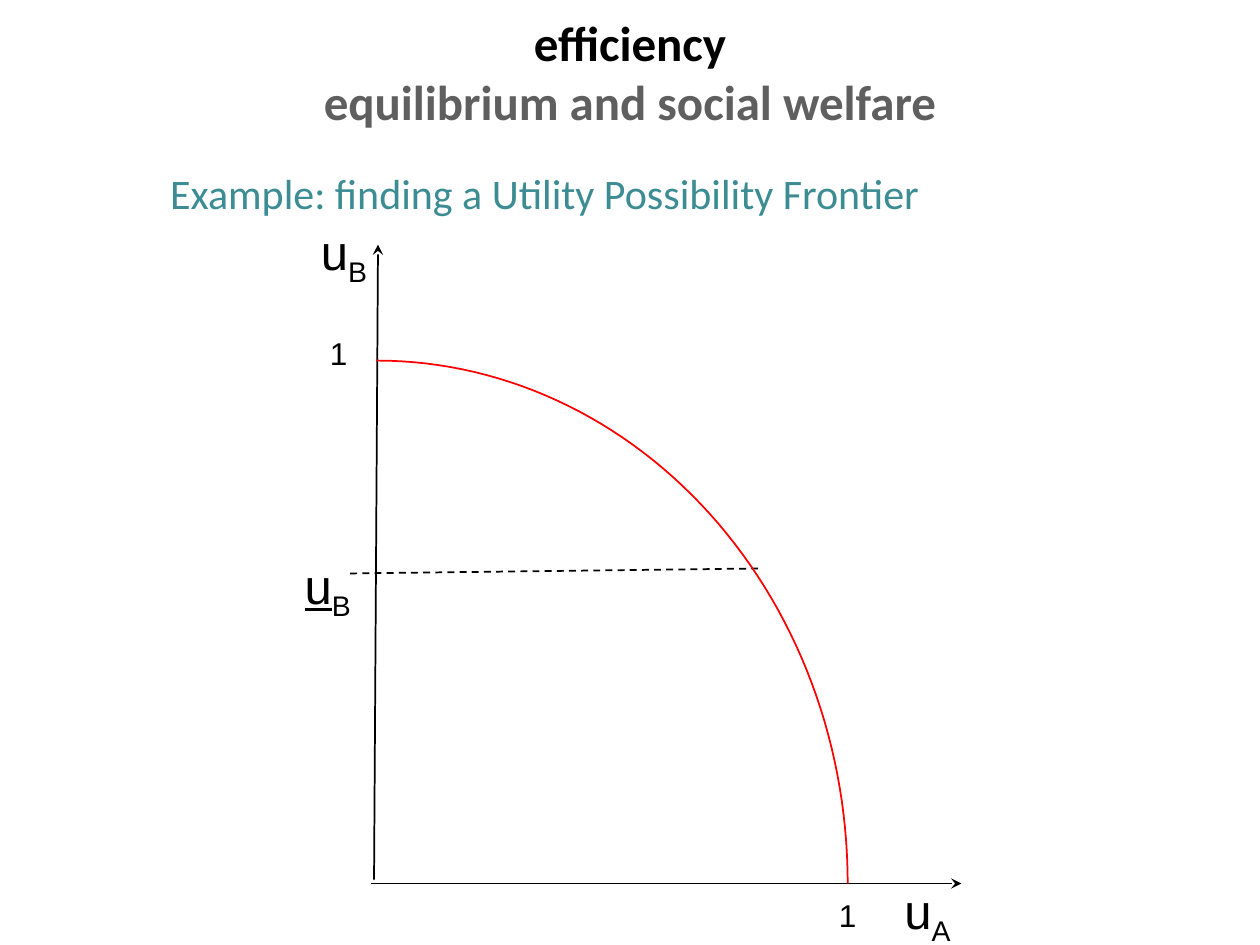
import math
from lxml import etree
from pptx import Presentation
from pptx import util as u
from pptx.dml.color import RGBColor
from pptx.enum import dml, shapes, text
from pptx.oxml import ns

# Content: lengths in cm, text sizes in points
BLACK, GREY, TEAL, RED = "000000", "5F5F5F", "3C8C93", "FF0000"
TITLE = [("efficiency", BLACK), ("equilibrium and social welfare", GREY)]
EXAMPLE = "Example: finding a Utility Possibility Frontier"

# start, end, dashed (the solid lines are the axes)
LINES = [
    ((7.47, 17.81), (19.38, 17.81), False),
    ((7.54, 17.73), (7.62, 4.93), False),
    ((7.06, 11.56), (15.29, 11.46), True),
]
# letter, subscript, underlined, position and size, wrapped
AXIS_LABELS = [
    ("u", "B", False, (6.22, 4.34, 1.45, 1.45), False),
    ("u", "A", False, (17.98, 17.63, 1.52, 1.45), False),
    ("u", "B", True, (5.89, 11.07, 1.68, 1.45), True),
]
TICKS = [(16.66, 17.93), (6.4, 6.6)]
TICK_SIZE = (0.84, 1.02)
ORIGIN, RADII, STEPS = (7.59, 17.81), (9.5, 10.54), 60


def color(value):
    return RGBColor.from_string(value)


def add_text(place, content, wrap=True):
    box = slide.shapes.add_textbox(*map(u.Cm, place))
    box.text_frame.text = content
    box.text_frame.word_wrap = wrap
    return box.text_frame


def style(span, font, size, shade, bold=False):
    span.font.name, span.font.size, span.font.bold = font, u.Pt(size), bold
    span.font.color.rgb = color(shade)


deck = Presentation()
deck.slide_width, deck.slide_height = u.Cm(25.4), u.Cm(19.05)
slide = deck.slides.add_slide(deck.slide_layouts[6])

# Axes and the dashed level line
for start, end, dashed in LINES:
    line = slide.shapes.add_connector(
        shapes.MSO_CONNECTOR.STRAIGHT, *map(u.Cm, start + end))
    line.line.color.rgb = color(BLACK)
    line.line.width = u.Pt(1)
    if dashed:
        line.line.dash_style = dml.MSO_LINE.DASH
    else:
        etree.SubElement(line.line._get_or_add_ln(), ns.qn("a:tailEnd"), type="stealth")
    etree.SubElement(line._element.spPr, ns.qn("a:effectLst"))

# Axis labels with subscripts
for letter, subscript, underlined, place, wrap in AXIS_LABELS:
    frame = add_text(place, letter, wrap)
    para = frame.paragraphs[0]
    para.add_run().text = subscript
    for span in para.runs:
        style(span, "Arial", 28, BLACK)
    para.runs[0].font.underline = underlined
    para.runs[1]._r.get_or_add_rPr().set("baseline", "-25000")
    frame.auto_size = text.MSO_AUTO_SIZE.SHAPE_TO_FIT_TEXT

# Tick labels
for corner in TICKS:
    frame = add_text(corner + TICK_SIZE, "1", False)
    style(frame.paragraphs[0].runs[0], "Arial", 18, BLACK)
    frame.auto_size = text.MSO_AUTO_SIZE.SHAPE_TO_FIT_TEXT

# Title and example heading
frame = add_text((1.27, -0.15, 22.86, 3.18), "\v".join(words for words, _ in TITLE))
frame.vertical_anchor = text.MSO_ANCHOR.MIDDLE
para = frame.paragraphs[0]
para.alignment = text.PP_ALIGN.CENTER
for span, (_, shade) in zip(para.runs, TITLE):
    style(span, "Calibri", 28, shade, bold=True)

frame = add_text((3.18, 3.25, 21.79, 1.47), EXAMPLE)
style(frame.paragraphs[0].runs[0], "Calibri", 24, TEAL)

# Frontier: a quarter ellipse around the origin
angles = [math.pi / 2 * step / STEPS for step in range(STEPS + 1)]
points = [(u.Cm(ORIGIN[0] + RADII[0] * math.cos(angle)),
           u.Cm(ORIGIN[1] - RADII[1] * math.sin(angle))) for angle in angles]
builder = slide.shapes.build_freeform(*points[0])
builder.add_line_segments(points[1:], close=False)
frontier = builder.convert_to_shape()
frontier.shadow.inherit = False
frontier.fill.background()
frontier.line.color.rgb = color(RED)
frontier.line.width = u.Pt(1)

deck.save("out.pptx")
